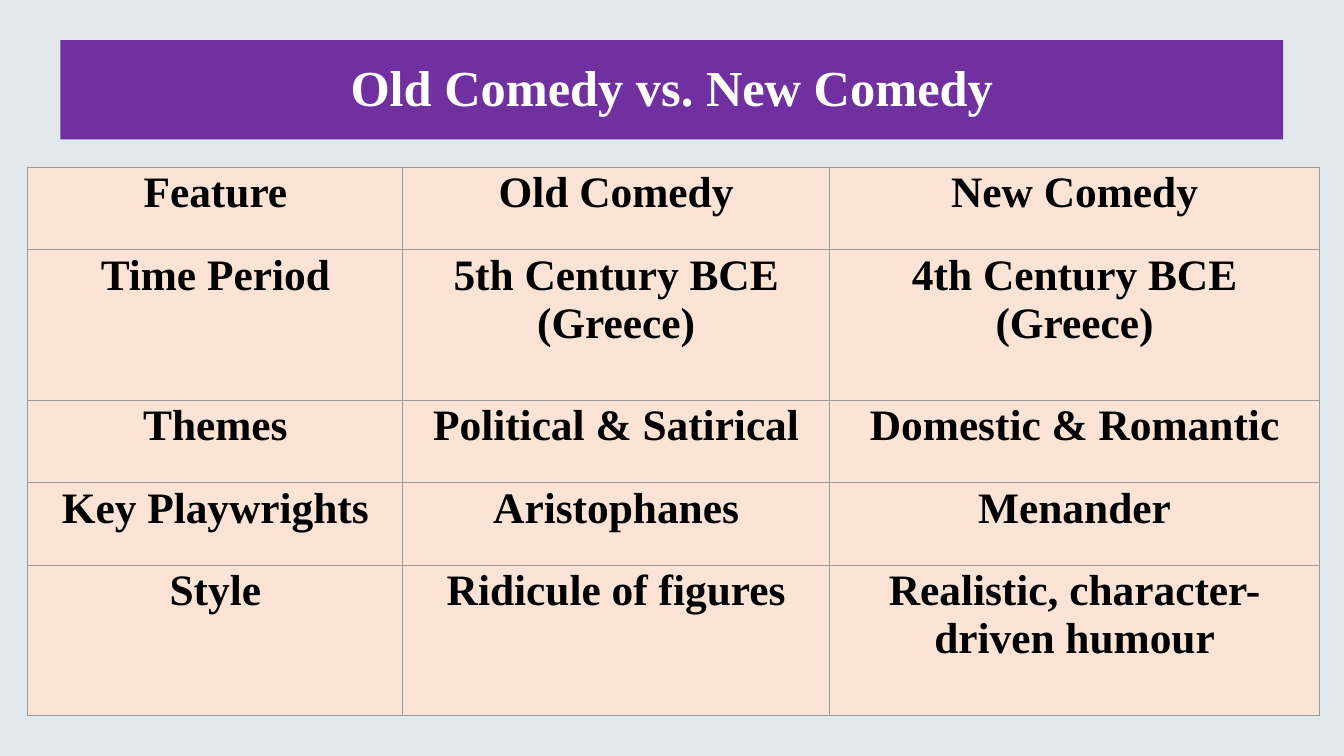
from lxml.etree import SubElement
from pptx import Presentation
from pptx.dml.color import RGBColor
from pptx.enum.shapes import MSO_SHAPE
from pptx.enum.text import MSO_ANCHOR, PP_ALIGN
from pptx.oxml.ns import qn
from pptx.util import Pt

FONT = "Times New Roman"
COLUMN_WIDTHS = [268, 304.5, 350.5]
ROW_HEIGHTS = [59, 107.4, 59, 59, 107.4]
COMEDY_ROWS = [
    ["Feature", "Old Comedy", "New Comedy"],
    ["Time Period", "5th Century BCE (Greece)", "4th Century BCE (Greece)"],
    ["Themes", "Political & Satirical", "Domestic & Romantic"],
    ["Key Playwrights", "Aristophanes", "Menander"],
    ["Style", "Ridicule of figures", "Realistic, character-driven humour"],
]


def paint(fill, color):
    """Give a fill a solid colour from a hex string."""
    fill.solid()
    fill.fore_color.rgb = RGBColor.from_string(color)


def write(text_frame, text, size, color):
    """Set centred bold text in a text frame."""
    text_frame.text = text
    paragraph = text_frame.paragraphs[0]
    paragraph.alignment = PP_ALIGN.CENTER
    font = paragraph.runs[0].font
    font.name, font.size, font.bold = FONT, Pt(size), True
    paint(font.fill, color)
    return paragraph


def outline_cell(cell, color, width):
    """Draw a thin line on all four sides of a cell."""
    properties = cell._tc.get_or_add_tcPr()
    for side in ("a:lnL", "a:lnR", "a:lnT", "a:lnB"):
        line = SubElement(properties, qn(side), w=str(Pt(width)))
        solid = SubElement(line, qn("a:solidFill"))
        SubElement(solid, qn("a:srgbClr"), val=color)


def add_title_banner(slide, left, top, width, height):
    """Add the purple banner with the slide title."""
    banner = slide.shapes.add_shape(
        MSO_SHAPE.RECTANGLE, Pt(left), Pt(top), Pt(width), Pt(height))
    banner.shadow.inherit = False
    banner.line.fill.background()
    paint(banner.fill, "7030A0")
    banner.text_frame.vertical_anchor = MSO_ANCHOR.MIDDLE
    paragraph = write(banner.text_frame, "Old Comedy vs. New Comedy", 36, "FFFFFF")
    paragraph.line_spacing = 0.9


def add_comparison_table(slide, left, top, width, height):
    """Add the table that compares the two kinds of comedy."""
    table = slide.shapes.add_table(
        len(ROW_HEIGHTS), len(COLUMN_WIDTHS),
        Pt(left), Pt(top), Pt(width), Pt(height)).table
    table.first_row = table.horz_banding = False
    for column, share in zip(table.columns, COLUMN_WIDTHS):
        column.width = Pt(width * share / sum(COLUMN_WIDTHS))
    for row, share, texts in zip(table.rows, ROW_HEIGHTS, COMEDY_ROWS):
        row.height = Pt(height * share / sum(ROW_HEIGHTS))
        for cell, text in zip(row.cells, texts):
            cell.margin_left = cell.margin_right = Pt(6.5)
            cell.margin_top = cell.margin_bottom = Pt(1.4)
            write(cell.text_frame, text, 31, "000000")
            outline_cell(cell, "9A9A9A", 0.75)
            paint(cell.fill, "FBE3D6")


def main():
    """Build the slide and save it."""
    presentation = Presentation()
    presentation.slide_width, presentation.slide_height = Pt(960), Pt(540)
    slide = presentation.slides.add_slide(presentation.slide_layouts[6])
    paint(slide.background.fill, "E2E9EC")
    add_title_banner(slide, 43.2, 28.6, 873.4, 71)
    add_comparison_table(slide, 19.8, 119.4, 923, 391.8)
    presentation.save("out.pptx")


if __name__ == "__main__":
    main()
